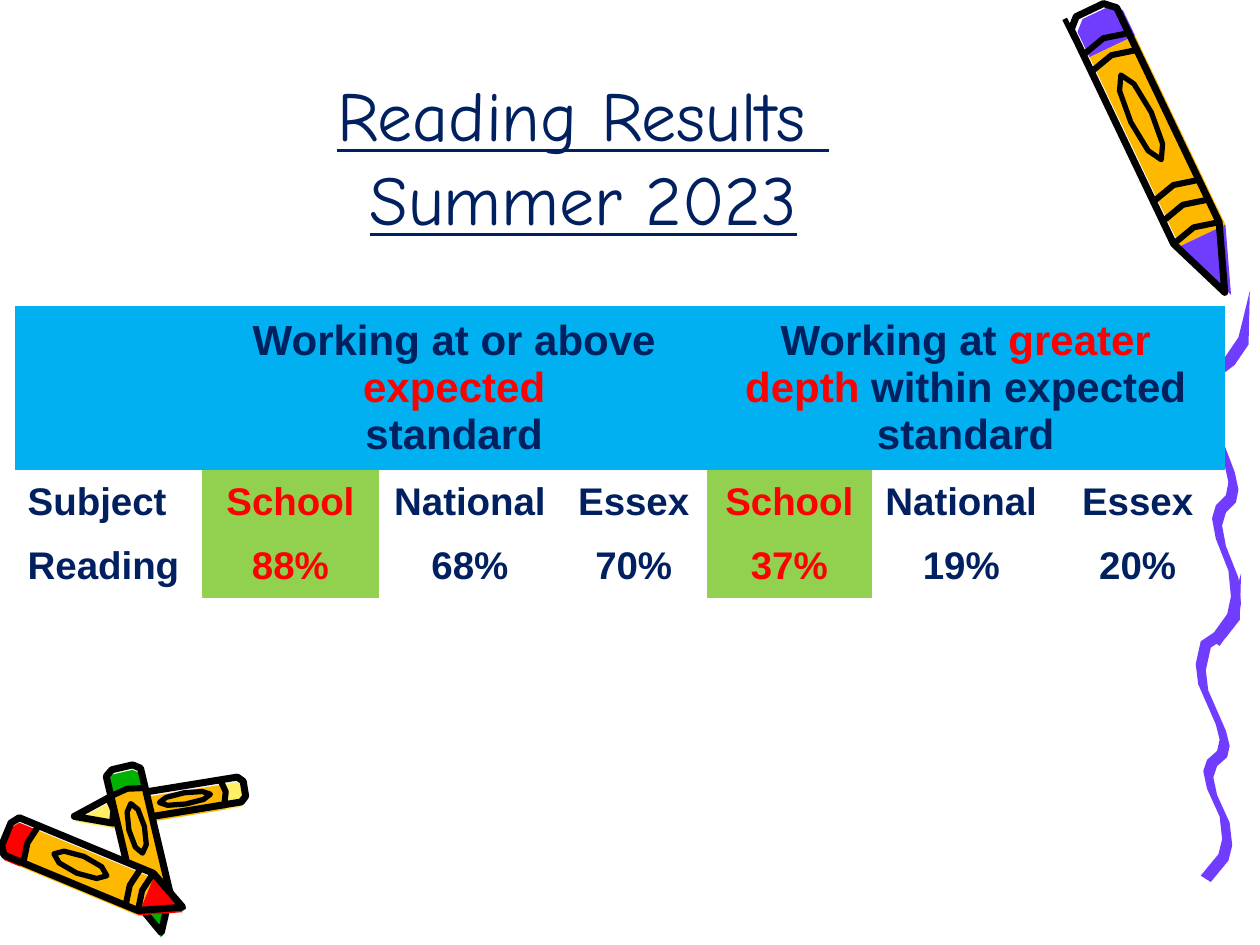
from math import cos, hypot, pi, sin

from lxml.etree import SubElement
from pptx import Presentation
from pptx.dml.color import RGBColor
from pptx.enum.shapes import MSO_CONNECTOR
from pptx.enum.text import MSO_ANCHOR, PP_ALIGN
from pptx.oxml.ns import qn
from pptx.util import Inches, Pt

NAVY, RED, SKY, LIME = "002060", "FF0000", "00B0F0", "92D050"
BLACK, WHITE, PALE, GOLD = "000000", "FFFFFF", "F8F8F8", "FFB800"
VIOLET, GREEN, CREAM = "703DFF", "00B200", "FFEF66"
PLAIN = "{2D5ABB26-0587-4C30-8999-92F81FD0307C}"

TITLE = ["Reading Results ", "Summer 2023"]
COLS = [1.48, 1.41, 1.44, 1.16, 1.31, 1.42, 1.38]
ROWS = [1.3, 0.51, 0.51]
HEADS = {
    1: [[("Working at or above ", NAVY), ("expected", RED)],
        [("standard", NAVY)]],
    4: [[("Working at ", NAVY), ("greater depth ", RED), ("within expected", NAVY)],
        [("standard", NAVY)]],
}
BODY = [
    ["Subject", "School", "National", "Essex", "School", "National", "Essex"],
    ["Reading", "88%", "68%", "70%", "37%", "19%", "20%"],
]

CRAYONS = [
    dict(tail=(8.65, 0.08), tip=(9.72, 2.32), width=0.4, color=VIOLET, paper=WHITE,
         slip=(0.05, 0.02), bands=[0.12, 0.18, 0.64, 0.71], label=0.38),
    dict(tail=(1.94, 6.26), tip=(0.59, 6.48), width=0.2, color=CREAM, paper=PALE,
         slip=(0, 0.04), bands=[0.13], label=0.35),
    dict(tail=(0.97, 6.09), tip=(1.28, 7.4), width=0.28, color=GREEN, paper=PALE,
         slip=(0, 0.04), bands=[0.15], label=0.37),
    dict(tail=(0.05, 6.62), tip=(1.45, 7.2), width=0.32, color=RED, paper=PALE,
         slip=(0, 0.04), bands=[0.14, 0.72], label=0.42),
]
CAP, NECK = 0.12, 0.79

WAVE = [(0.04, 2.4), (0.18, 2.23), (0.21, 2.11), (0.19, 1.93), (0.09, 1.71), (0.06, 1.57),
        (0.09, 1.48), (0.17, 1.41), (0.19, 1.32), (0.16, 1.2), (0.02, 0.88), (0, 0.72),
        (0.04, 0.54), (0.16, 0.46), (0.27, 0.32)]
CREST = (0.36, 0)
STROKE = (0.08, 0.05)
RIBBONS = [(9.49, 4.55, 1), (9.56, 2.31, 1.15)]


def tint(code):
    return RGBColor.from_string(code)


def trace(slide, points, fill=None, ink=0, close=True):
    first, *rest = [(Inches(x), Inches(y)) for x, y in points]
    pen = slide.shapes.build_freeform(*first)
    pen.add_line_segments(rest, close=close)
    shape = pen.convert_to_shape()
    shape.shadow.inherit = False
    if fill:
        shape.fill.solid()
        shape.fill.fore_color.rgb = tint(fill)
    else:
        shape.fill.background()
    if ink:
        shape.line.color.rgb = tint(BLACK)
        shape.line.width = Pt(ink)
    else:
        shape.line.fill.background()


def add_crayon(slide, tail, tip, width, color, paper, slip, bands, label):
    dx, dy = tip[0] - tail[0], tip[1] - tail[1]
    size, half = hypot(dx, dy), width / 2

    def place(points, shift=(0, 0)):
        return [(tail[0] + along * dx - side * half * dy / size + shift[0],
                 tail[1] + along * dy + side * half * dx / size + shift[1])
                for along, side in points]

    end = [(0.03, -1), (0, -0.6), (0, 0.6), (0.03, 1)]
    nib = [(NECK, 1), (1, 0), (NECK, -1)]
    cap = end + [(CAP, 1), (CAP, -1)]
    sleeve = [(CAP, -1), (CAP, 1), (NECK, 1), (NECK, -1)]
    oval = [(label + 0.15 * cos(k * pi / 4), 0.45 * sin(k * pi / 4)) for k in range(8)]

    trace(slide, place(end + nib), paper)
    for part, shade in [(cap, color), (sleeve, GOLD), (nib, color)]:
        trace(slide, place(part, slip), shade)
    trace(slide, place(end + nib), ink=4)
    trace(slide, place(oval), ink=3)
    for band in bands + [NECK]:
        arc = [(band, -1), (band - 0.02, 0), (band, 1)]
        trace(slide, place(arc), ink=3.5, close=False)


def add_ribbon(slide, left, top, stretch):
    back = [(x + STROKE[0], y + STROKE[1]) for x, y in reversed(WAVE)]
    outline = WAVE + [CREST] + back
    trace(slide, [(left + x, top + y * stretch) for x, y in outline], VIOLET)


def write(frame, lines, size, face, align=PP_ALIGN.CENTER, **style):
    for i, line in enumerate(lines):
        para = frame.add_paragraph() if i else frame.paragraphs[0]
        para.alignment = align
        for text, color in line:
            run = para.add_run()
            run.text = text
            font = run.font
            font.size, font.name = Pt(size), face
            font.color.rgb = tint(color)
            for key, value in style.items():
                setattr(font, key, value)


def add_grid(slide):
    frame = slide.shapes.add_table(
        len(ROWS), len(COLS), Inches(0.12), Inches(2.43), Inches(sum(COLS)), Inches(sum(ROWS)))
    grid = frame.table
    grid.first_row = grid.horz_banding = False
    grid._tbl.tblPr.find(qn("a:tableStyleId")).text = PLAIN
    for col, width in zip(grid.columns, COLS):
        col.width = Inches(width)
    for row, height in zip(grid.rows, ROWS):
        row.height = Inches(height)
    for c in range(len(COLS)):
        cell = grid.cell(0, c)
        cell.fill.solid()
        cell.fill.fore_color.rgb = tint(SKY)
    for c, lines in HEADS.items():
        cell = grid.cell(0, c)
        cell.merge(grid.cell(0, c + 2))
        cell.vertical_anchor = MSO_ANCHOR.MIDDLE
        write(cell.text_frame, lines, 24, "Arial", bold=True)
    for r, words in enumerate(BODY, 1):
        for c, word in enumerate(words):
            cell = grid.cell(r, c)
            cell.vertical_anchor = MSO_ANCHOR.MIDDLE
            school = c in HEADS
            if school:
                cell.fill.solid()
                cell.fill.fore_color.rgb = tint(LIME)
            else:
                cell.fill.background()
            align = PP_ALIGN.CENTER if c else PP_ALIGN.LEFT
            write(cell.text_frame, [[(word, RED if school else NAVY)]], 22, "Arial", align, bold=True)


def main():
    deck = Presentation()
    deck.slide_width, deck.slide_height = Inches(10), Inches(7.5)
    slide = deck.slides.add_slide(deck.slide_layouts[6])
    for ribbon in RIBBONS:
        add_ribbon(slide, *ribbon)
    for crayon in CRAYONS:
        add_crayon(slide, **crayon)
    edge = slide.shapes.add_connector(
        MSO_CONNECTOR.STRAIGHT, Inches(8.45), Inches(0.15), Inches(8.53), Inches(0.31))
    edge.line.color.rgb = tint(BLACK)
    edge.line.width = Pt(3)
    SubElement(edge._element.spPr, qn("a:effectLst"))
    add_grid(slide)
    box = slide.shapes.add_textbox(Inches(0.98), Inches(0.52), Inches(7.3), Inches(1.45))
    box.text_frame.word_wrap = True
    write(box.text_frame, [[(line, NAVY)] for line in TITLE], 40, "Comic Neue", underline=True)
    deck.save("out.pptx")


if __name__ == "__main__":
    main()
